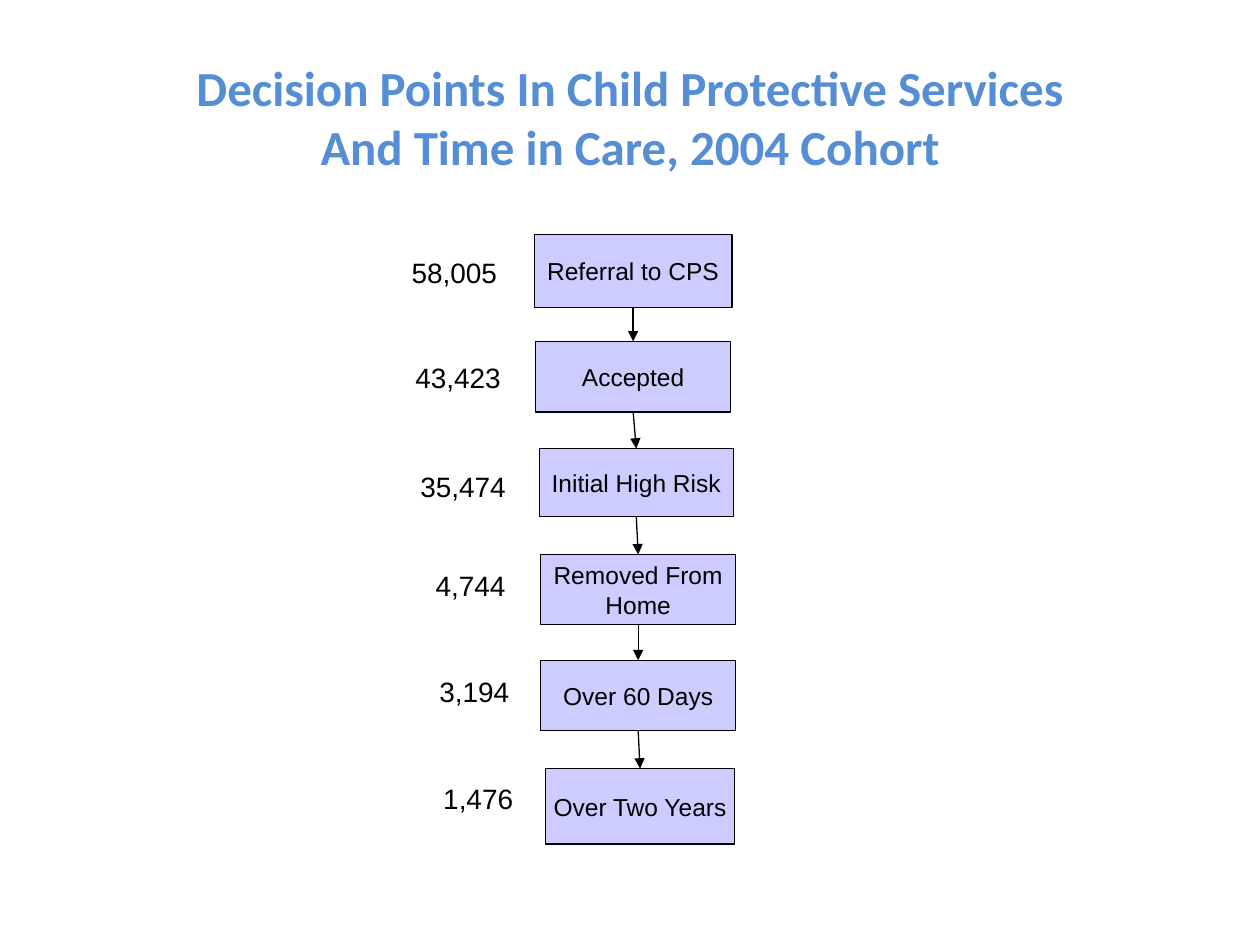
from dataclasses import dataclass

from lxml import etree
from pptx import Presentation
from pptx.dml.color import RGBColor
from pptx.enum.shapes import MSO_CONNECTOR, MSO_SHAPE
from pptx.enum.text import MSO_ANCHOR, PP_ALIGN
from pptx.oxml.ns import qn
from pptx.util import Inches, Pt

RECTANGLE = MSO_SHAPE.RECTANGLE
STRAIGHT = MSO_CONNECTOR.STRAIGHT
CENTER = PP_ALIGN.CENTER
MIDDLE = MSO_ANCHOR.MIDDLE
TOP = MSO_ANCHOR.TOP
BOTTOM_SIDE, TOP_SIDE = 2, 0
TITLE_ONLY = 5


@dataclass(frozen=True)
class Theme:
    title_color: RGBColor = RGBColor(0x55, 0x8E, 0xD5)
    box_fill: RGBColor = RGBColor(0xCC, 0xCC, 0xFF)
    ink: RGBColor = RGBColor(0, 0, 0)
    title_font: str = "Calibri"
    body_font: str = "Arial"
    title_size: int = 28
    box_size: int = 14
    count_size: int = 16
    line_width: float = 0.75


THEME = Theme()
TITLE = "Decision Points In Child Protective Services\vAnd Time in Care, 2004 Cohort"
COUNT_SIZE = (0.91, 0.36)

# Step label, its box (left, top, width, height), count, count position (left, top)
STEPS = [
    ("Referral to CPS", (4.24, 1.86, 1.57, 0.58), "58,005", (3.15, 1.99)),
    ("Accepted", (4.25, 2.71, 1.55, 0.56), "43,423", (3.18, 2.82)),
    ("Initial High Risk", (4.28, 3.56, 1.54, 0.54), "35,474", (3.22, 3.69)),
    ("Removed From\nHome", (4.29, 4.4, 1.55, 0.56), "4,744", (3.28, 4.47)),
    ("Over 60 Days", (4.29, 5.24, 1.55, 0.56), "3,194", (3.31, 5.31)),
    ("Over Two Years", (4.33, 6.1, 1.5, 0.6), "1,476", (3.34, 6.16)),
]


def write_text(shape, text, *, size, font=THEME.body_font, color=THEME.ink,
               bold=False, anchor=MIDDLE, wrap=True):
    frame = shape.text_frame
    frame.text = text
    frame.word_wrap = wrap
    frame.vertical_anchor = anchor
    frame.margin_left = frame.margin_right = Inches(0.09)
    frame.margin_top = frame.margin_bottom = Inches(0.04)
    for para in frame.paragraphs:
        para.alignment = CENTER
        for span in para.runs:
            span.font.size = Pt(size)
            span.font.name = font
            span.font.bold = bold
            span.font.color.rgb = color


def add_title(page):
    title = page.shapes.title
    title.left, title.top = Inches(0.5), Inches(0.3)
    title.width, title.height = Inches(9), Inches(1.25)
    write_text(title, TITLE, size=THEME.title_size, font=THEME.title_font,
               color=THEME.title_color, bold=True)


def add_step(page, label, area):
    box = page.shapes.add_shape(RECTANGLE, *map(Inches, area))
    box.shadow.inherit = False
    box.fill.solid()
    box.fill.fore_color.rgb = THEME.box_fill
    box.line.color.rgb = THEME.ink
    box.line.width = Pt(THEME.line_width)
    write_text(box, label, size=THEME.box_size, wrap=False)
    return box


def add_count(page, count, position):
    box = page.shapes.add_textbox(*map(Inches, position + COUNT_SIZE))
    write_text(box, count, size=THEME.count_size, anchor=TOP)


def add_arrow(page, upper, lower):
    arrow = page.shapes.add_connector(STRAIGHT, 0, 0, 0, 0)
    arrow.begin_connect(upper, BOTTOM_SIDE)
    arrow.end_connect(lower, TOP_SIDE)
    arrow.line.color.rgb = THEME.ink
    arrow.line.width = Pt(THEME.line_width)
    properties = arrow.line._get_or_add_ln()
    etree.SubElement(properties, qn("a:tailEnd"), type="triangle")
    etree.SubElement(properties.getparent(), qn("a:effectLst"))


def main():
    deck = Presentation()
    deck.slide_width, deck.slide_height = Inches(10), Inches(7.5)
    page = deck.slides.add_slide(deck.slide_layouts[TITLE_ONLY])
    add_title(page)
    boxes = [add_step(page, label, area) for label, area, _, _ in STEPS]
    for upper, lower in zip(boxes, boxes[1:]):
        add_arrow(page, upper, lower)
    for _, _, count, position in STEPS:
        add_count(page, count, position)
    deck.save("out.pptx")


if __name__ == "__main__":
    main()
